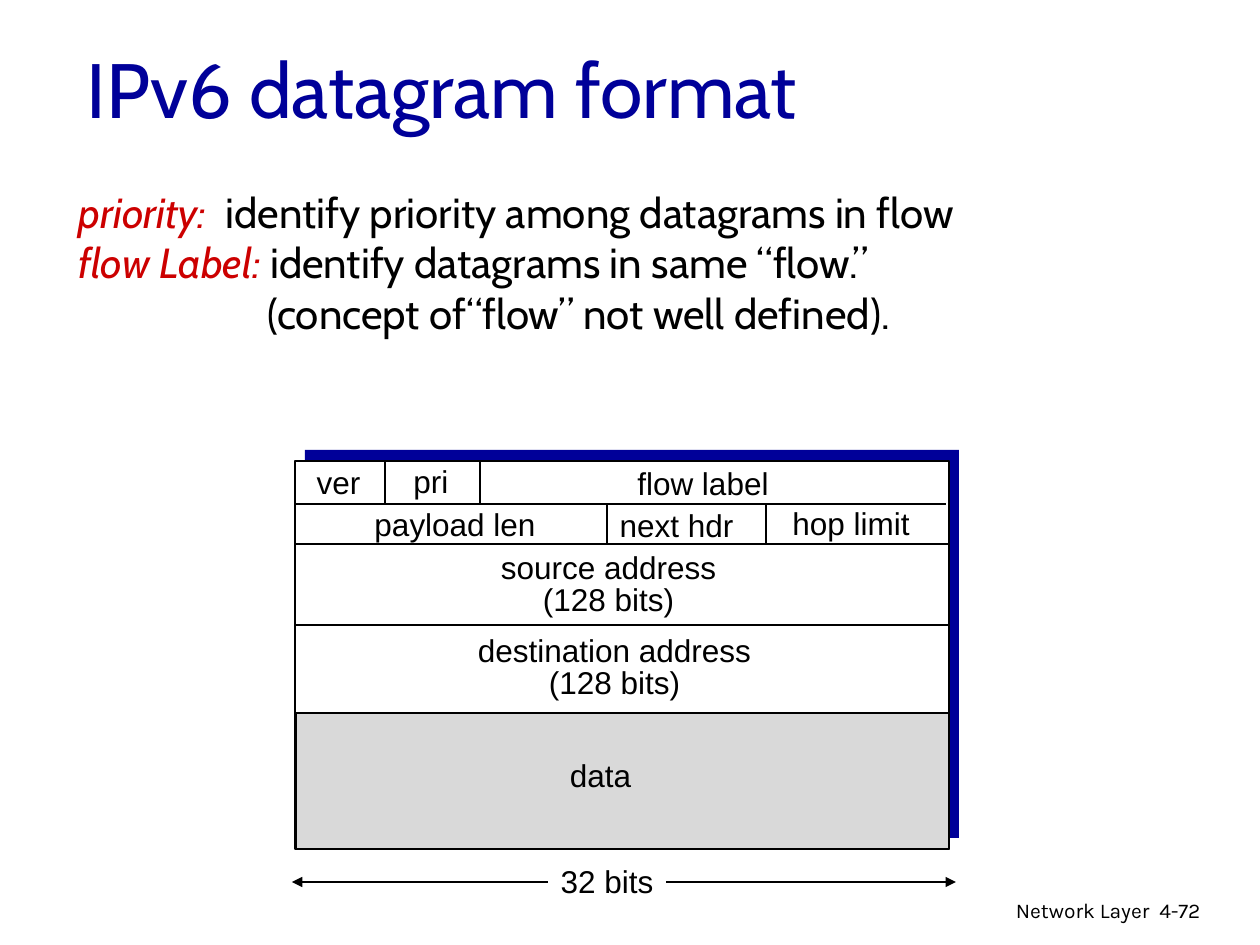
from dataclasses import dataclass

from lxml.etree import SubElement
from pptx import Presentation
from pptx.dml.color import RGBColor
from pptx.enum.shapes import MSO_CONNECTOR, MSO_SHAPE
from pptx.enum.text import MSO_ANCHOR, MSO_AUTO_SIZE, PP_ALIGN
from pptx.oxml.ns import qn
from pptx.util import Emu, Pt

EMU_PER_INCH, PX_PER_INCH = 914400, 126
BLACK, WHITE, NAVY, RED, GRAY = "000000", "FFFFFF", "000099", "CC0000", "D9D9D9"
LEFT, RIGHT = 295, 949
TOP, ADDRESSES, DESTINATION, DATA, BOTTOM = 461, 544, 625, 713, 849
FIRST_ROW_END = 504
FRAME_WIDTH, FRAME_HEIGHT = RIGHT - LEFT, BOTTOM - TOP


@dataclass(frozen=True)
class Block:
    left: int
    top: int
    width: int
    height: int
    fill: str
    line_width: float = 0


@dataclass(frozen=True)
class Rule:
    x1: int
    y1: int
    x2: int
    y2: int
    width: float = 1.5
    arrows: bool = False


@dataclass(frozen=True)
class Label:
    lines: tuple[str, ...]
    left: int
    top: int
    width: int
    height: int = 50
    font: str = "Arial"
    size: int = 18
    align: PP_ALIGN = PP_ALIGN.CENTER


@dataclass(frozen=True)
class Definition:
    term: str
    meaning: str
    indent: int = 0


BLOCKS = (
    Block(305, 450, FRAME_WIDTH, FRAME_HEIGHT, NAVY),
    Block(LEFT, TOP, FRAME_WIDTH, FRAME_HEIGHT, WHITE, 1.5),
    Block(LEFT + 1, DATA, FRAME_WIDTH - 1, BOTTOM - DATA, GRAY, 0.75),
)
RULES = (
    Rule(LEFT, FIRST_ROW_END, RIGHT - 3, FIRST_ROW_END),
    *(Rule(LEFT, y, RIGHT, y) for y in (ADDRESSES, DESTINATION, DATA)),
    *(Rule(x, TOP, x, FIRST_ROW_END) for x in (385, 480)),
    *(Rule(x, FIRST_ROW_END, x, ADDRESSES) for x in (607, 766)),
    Rule(292, 882, 956, 882, 0.75, True),
)
WIDTH_GAP = Block(548, 856, 118, 50, WHITE)
LABELS = (
    Label(("ver",), 302, 457, 73),
    Label(("pri",), 399, 456, 64),
    Label(("flow label",), 620, 458, 166),
    Label(("payload len",), 357, 499, 196),
    Label(("next hdr",), 602, 500, 149),
    Label(("hop limit",), 775, 498, 152),
    Label(("source address", "(128 bits)"), 483, 548, 251, 77),
    Label(("destination address", "(128 bits)"), 460, 631, 309, 77),
    Label(("data",), 555, 750, 91),
    Label(("32 bits",), 543, 856, 128),
    Label(("Network Layer",), 762, 891, 400, 39, "Karla", 12, PP_ALIGN.RIGHT),
    Label(("4-72",), 1147, 891, 93, 38, "Karla", 12, PP_ALIGN.LEFT),
)
DEFINITIONS = (
    Definition("priority:", "  identify priority among datagrams in flow"),
    Definition("flow Label:", " identify datagrams in same “flow.”"),
    Definition("", "(concept of“flow” not well defined).", 189),
)


def px(length: int) -> Emu:
    """Turn pixels into EMU."""
    return Emu(round(length * EMU_PER_INCH / PX_PER_INCH))


def color(value: str) -> RGBColor:
    """Turn a hex string into a colour."""
    return RGBColor.from_string(value)


def style_font(font, name: str, size: int, hex_color: str = BLACK) -> None:
    """Set the typeface, size and colour of a font."""
    font.name, font.size = name, Pt(size)
    font.color.rgb = color(hex_color)


def move(shape, left: int, top: int, width: int, height: int) -> None:
    """Place a shape on the slide."""
    shape.left, shape.top = px(left), px(top)
    shape.width, shape.height = px(width), px(height)


def draw_block(slide, block: Block) -> None:
    """Draw a filled rectangle, outlined if it has a line width."""
    shape = slide.shapes.add_shape(
        MSO_SHAPE.RECTANGLE, px(block.left), px(block.top), px(block.width), px(block.height)
    )
    shape.shadow.inherit = False
    shape.fill.solid()
    shape.fill.fore_color.rgb = color(block.fill)
    if block.line_width:
        shape.line.color.rgb = color(BLACK)
        shape.line.width = Pt(block.line_width)
    else:
        shape.line.fill.background()


def draw_rule(slide, rule: Rule) -> None:
    """Draw a straight line, with arrowheads at both ends on request."""
    connector = slide.shapes.add_connector(
        MSO_CONNECTOR.STRAIGHT, px(rule.x1), px(rule.y1), px(rule.x2), px(rule.y2)
    )
    connector.line.color.rgb = color(BLACK)
    connector.line.width = Pt(rule.width)
    if rule.arrows:
        line = connector.line._get_or_add_ln()
        for end in ("a:headEnd", "a:tailEnd"):
            SubElement(line, qn(end), type="triangle")
    SubElement(connector._element.spPr, qn("a:effectLst"))


def draw_label(slide, label: Label) -> None:
    """Draw a text box, with tighter spacing if it has several lines."""
    box = slide.shapes.add_textbox(
        px(label.left), px(label.top), px(label.width), px(label.height)
    )
    frame = box.text_frame
    frame.word_wrap = False
    frame.text = "\n".join(label.lines)
    for paragraph in frame.paragraphs:
        paragraph.alignment = label.align
        style_font(paragraph.font, label.font, label.size)
        if len(label.lines) > 1:
            paragraph.line_spacing = 0.85


def fill_title(title) -> None:
    """Fill and format the title placeholder."""
    move(title, 74, 25, 1071, 125)
    frame = title.text_frame
    frame.text = "IPv6 datagram format"
    frame.auto_size = MSO_AUTO_SIZE.NONE
    frame.vertical_anchor = MSO_ANCHOR.MIDDLE
    paragraph = frame.paragraphs[0]
    paragraph.alignment = PP_ALIGN.LEFT
    style_font(paragraph.font, "Cabin", 44, NAVY)


def fill_definitions(body) -> None:
    """Fill the body placeholder with unbulleted definitions."""
    move(body, 66, 180, 1036, 248)
    frame = body.text_frame
    frame.auto_size = MSO_AUTO_SIZE.NONE
    for index, definition in enumerate(DEFINITIONS):
        paragraph = frame.add_paragraph() if index else frame.paragraphs[0]
        paragraph.space_before = Pt(0)
        style_font(paragraph.font, "Cabin", 24)
        properties = paragraph._p.get_or_add_pPr()
        properties.set("marL", str(px(definition.indent)))
        properties.set("indent", "0")
        properties.insert_element_before(
            properties.makeelement(qn("a:buNone")), "a:tabLst", "a:defRPr", "a:extLst"
        )
        if definition.term:
            term = paragraph.add_run()
            term.text = definition.term
            term.font.italic = True
            term.font.color.rgb = color(RED)
        paragraph.add_run().text = definition.meaning


def main() -> None:
    """Build the slide and save it."""
    presentation = Presentation()
    presentation.slide_width, presentation.slide_height = px(1260), px(945)
    slide = presentation.slides.add_slide(presentation.slide_layouts[1])
    fill_title(slide.shapes.title)
    fill_definitions(slide.placeholders[1])
    for block in BLOCKS:
        draw_block(slide, block)
    for rule in RULES:
        draw_rule(slide, rule)
    draw_block(slide, WIDTH_GAP)
    for label in LABELS:
        draw_label(slide, label)
    presentation.save("out.pptx")


if __name__ == "__main__":
    main()
